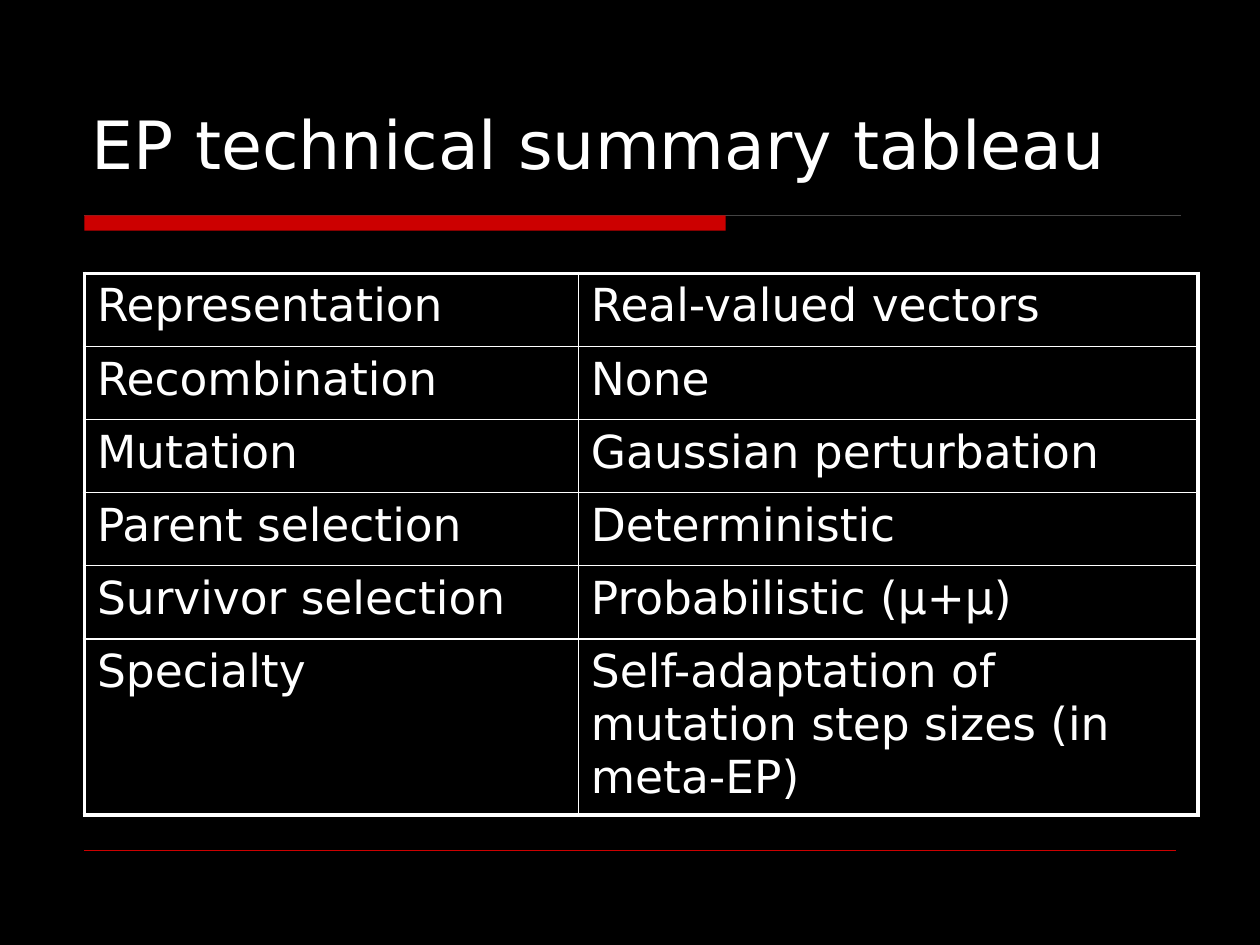
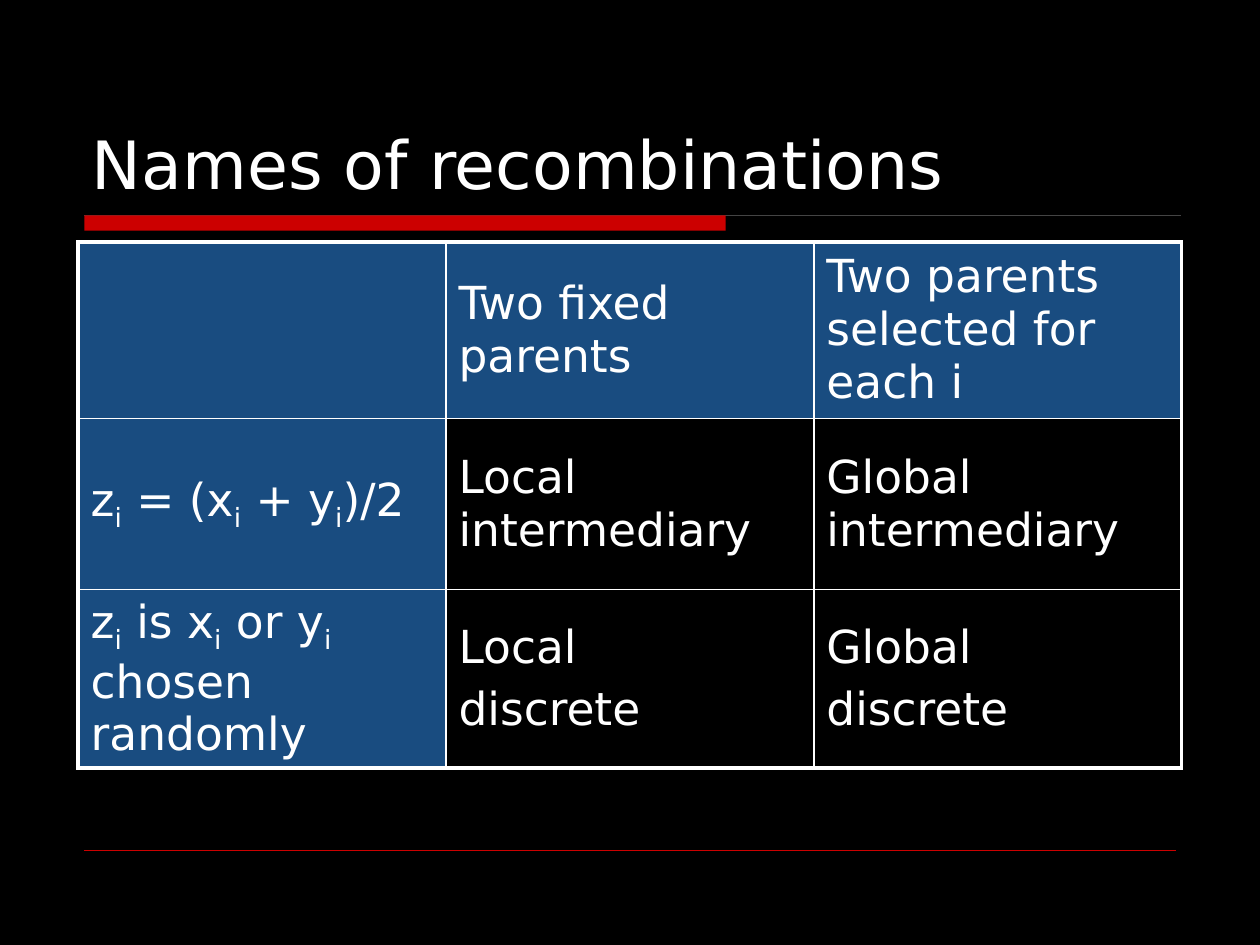
from pptx import Presentation
from pptx.dml.color import RGBColor
from pptx.enum.shapes import MSO_CONNECTOR, MSO_SHAPE
from pptx.enum.text import MSO_ANCHOR as Anchor, MSO_AUTO_SIZE, PP_ALIGN
from pptx.oxml.ns import qn
from pptx.util import Inches, Pt
from lxml.etree import SubElement

# Content: "_i" marks a subscript i, a line break starts a new paragraph
SLIDES = [
    {
        "title": "EP technical summary tableau",
        "title_height": 1.17,
        "at": (0.67, 2.17),
        "columns": [3.92, 4.92],
        "row_heights": [0.58] * 5 + [1.4],
        "anchor": Anchor.TOP,
        "headed": False,
        "rows": [
            ("Representation", "Real-valued vectors"),
            ("Recombination", "None"),
            ("Mutation", "Gaussian perturbation"),
            ("Parent selection", "Deterministic"),
            ("Survivor selection", "Probabilistic (μ+μ)"),
            ("Specialty", "Self-adaptation of mutation step sizes (in meta-EP)"),
        ],
    },
    {
        "title": "Names of recombinations",
        "title_height": 1.33,
        "at": (0.62, 1.92),
        "columns": [2.92] * 3,
        "row_heights": [1.4, 1.36, 1.4],
        "anchor": Anchor.MIDDLE,
        "headed": True,
        "rows": [
            ("", "Two fixed parents", "Two parents selected for each i"),
            ("z_i = (x_i + y_i)/2", "Local intermediary", "Global intermediary"),
            ("z_i is x_i or y_i chosen randomly", "Local\ndiscrete", "Global\ndiscrete"),
        ],
    },
]

# Shared style
FONT = "DejaVu Sans"
BLACK, WHITE, RED, GREY, BLUE = "000000", "FFFFFF", "CC0000", "444444", "3399FF"
TITLE_SIZE, CELL_SIZE = 38, 26
OUTER, INNER = 2.25, 1


def color(value):
    return RGBColor.from_string(value)


def format_span(span, size):
    span.font.name = FONT
    span.font.size = Pt(size)
    span.font.color.rgb = color(WHITE)


def add_rule(slide, left, right, top, line_color, width):
    rule = slide.shapes.add_connector(
        MSO_CONNECTOR.STRAIGHT, Inches(left), Inches(top), Inches(right), Inches(top))
    rule.line.color.rgb = color(line_color)
    rule.line.width = Pt(width)
    SubElement(rule._element.spPr, qn("a:effectLst"))


def add_frame(slide):
    """Red band with its thin rule, and the rule at the foot."""
    add_rule(slide, 0.67, 9.37, 1.71, GREY, 0.5)
    band = slide.shapes.add_shape(
        MSO_SHAPE.RECTANGLE, Inches(0.67), Inches(1.71), Inches(5.09), Inches(0.12))
    band.shadow.inherit = False
    band.fill.solid()
    band.fill.fore_color.rgb = color(RED)
    band.line.fill.background()
    add_rule(slide, 0.67, 9.33, 6.75, RED, 0.25)


def set_title(slide, text, height):
    title = slide.shapes.title
    title.left, title.top = Inches(0.63), Inches(0.33)
    title.width, title.height = Inches(8.75), Inches(height)
    frame = title.text_frame
    frame.text = text
    frame.word_wrap = True
    frame.auto_size = MSO_AUTO_SIZE.NONE
    frame.vertical_anchor = Anchor.BOTTOM
    para = frame.paragraphs[0]
    para.alignment = PP_ALIGN.LEFT
    format_span(para.runs[0], TITLE_SIZE)


def set_borders(cell, widths):
    properties = cell._tc.get_or_add_tcPr()
    for side, width in widths.items():
        line = SubElement(properties, qn(f"a:ln{side}"), w=str(int(Pt(width))))
        fill = SubElement(line, qn("a:solidFill"))
        SubElement(fill, qn("a:srgbClr"), val=WHITE)


def fill_cell(cell, shaded):
    if not shaded:
        cell.fill.background()
        return
    cell.fill.solid()
    cell.fill.fore_color.rgb = color(BLUE)
    tint = cell._tc.tcPr.find(qn("a:solidFill"))[0]
    SubElement(tint, qn("a:alpha"), val="50000")


def write_cell(cell, text):
    cell.text_frame.text = text.replace("_i", "")
    for para, words in zip(cell.text_frame.paragraphs, text.split("\n")):
        para.space_before = Pt(0.2 * CELL_SIZE)
        if "_i" in words:
            para.clear()
            for index, part in enumerate(words.replace("_i", "|i|").split("|")):
                if part:
                    span = para.add_run()
                    span.text = part
                    if index % 2:
                        span._r.get_or_add_rPr().set("baseline", "-25000")
        for span in para.runs:
            format_span(span, CELL_SIZE)


def add_grid(slide, page):
    rows, columns, heights = page["rows"], page["columns"], page["row_heights"]
    left, top = page["at"]
    table = slide.shapes.add_table(
        len(rows), len(columns), Inches(left), Inches(top),
        Inches(sum(columns)), Inches(sum(heights))).table
    table.first_row = table.horz_banding = False
    for column, width in zip(table.columns, columns):
        column.width = Inches(width)
    for row, height in zip(table.rows, heights):
        row.height = Inches(height)

    # Thick lines outside, thin lines inside
    for r, texts in enumerate(rows):
        for c, text in enumerate(texts):
            cell = table.cell(r, c)
            edges = {"L": c == 0, "R": c == len(columns) - 1,
                     "T": r == 0, "B": r == len(rows) - 1}
            set_borders(cell, {side: OUTER if edge else INNER
                               for side, edge in edges.items()})
            fill_cell(cell, page["headed"] and (r == 0 or c == 0))
            cell.vertical_anchor = page["anchor"]
            write_cell(cell, text)


def main():
    deck = Presentation()
    deck.slide_width, deck.slide_height = Inches(10), Inches(7.5)
    background = deck.slide_master.background.fill
    background.solid()
    background.fore_color.rgb = color(BLACK)
    for page in SLIDES:
        slide = deck.slides.add_slide(deck.slide_layouts[5])
        add_frame(slide)
        set_title(slide, page["title"], page["title_height"])
        add_grid(slide, page)
    deck.save("out.pptx")


if __name__ == "__main__":
    main()
